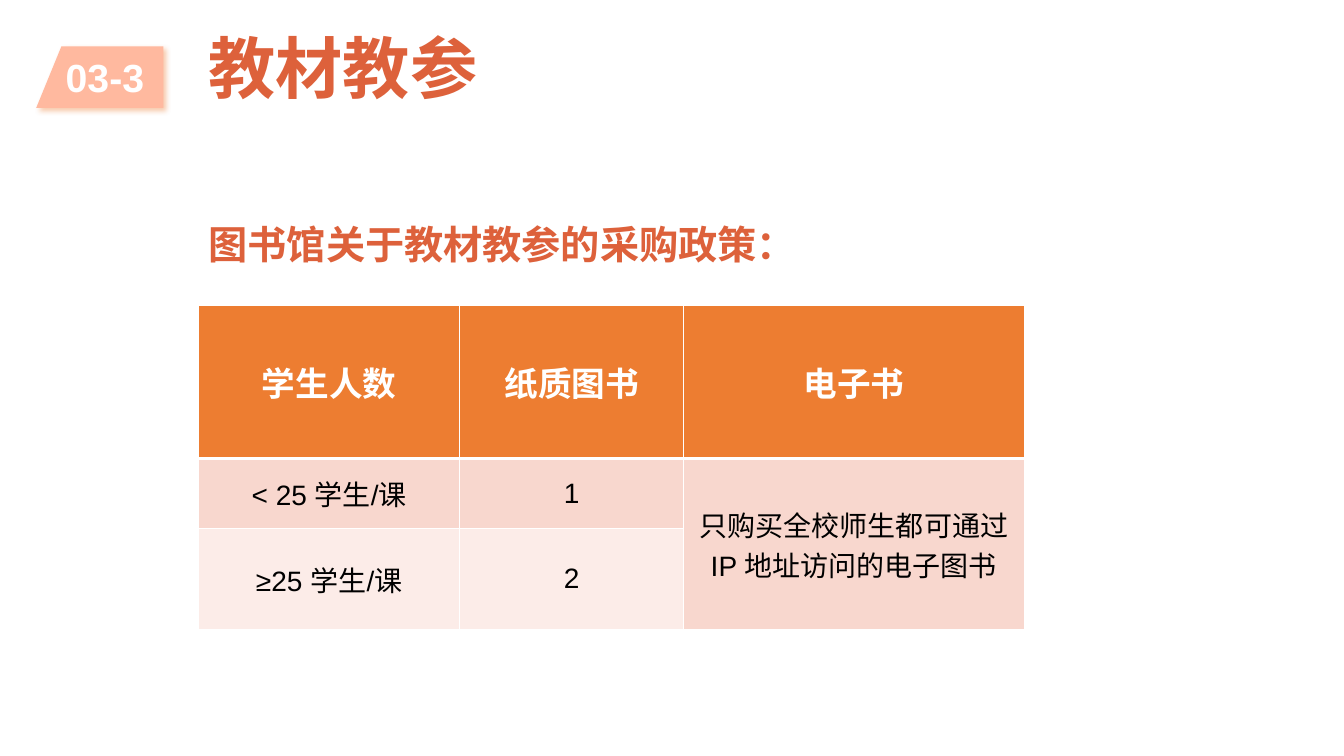
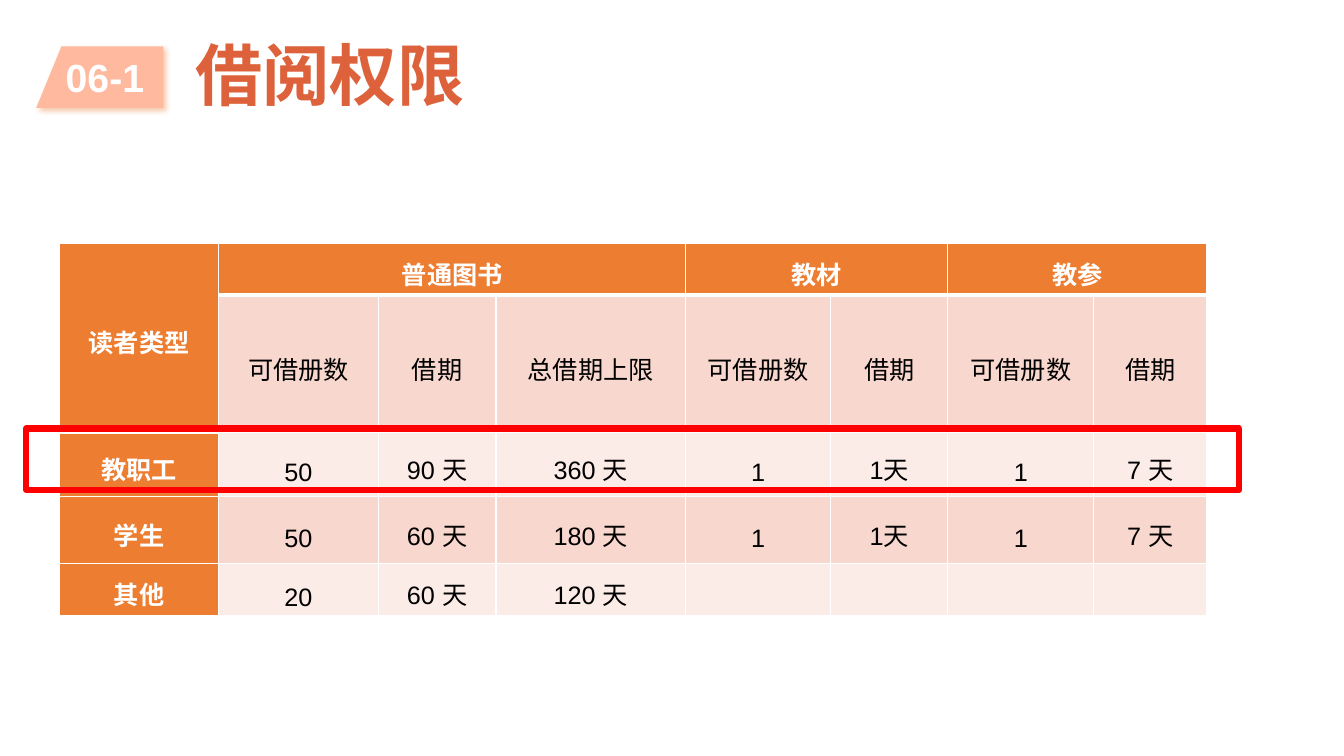
from pptx import Presentation
from pptx.dml.color import RGBColor
from pptx.enum.shapes import MSO_SHAPE as SHAPE
from pptx.enum.text import MSO_ANCHOR as ANCHOR, PP_ALIGN as ALIGN
from pptx.oxml import parse_xml
from pptx.oxml.ns import nsdecls, qn
from pptx.util import Inches, Pt

FONT = "Arial"
TITLE = "DD613B"
TAG = "FFB99F"
HEADER = "ED7D31"
BANDS = ("F8D7CE", "FCECE8")
WHITE = "FFFFFF"
BLACK = "000000"
RED = "FF0000"


def color(hex_code):
    return RGBColor.from_string(hex_code)


class Deck:
    def __init__(self):
        self.prs = Presentation()
        self.prs.slide_width, self.prs.slide_height = Inches(13.33), Inches(7.5)
        self.slide = None

    def new_slide(self):
        self.slide = self.prs.slides.add_slide(self.prs.slide_layouts[6])

    def set_text(self, frame, words, size, hex_code, bold=True, align=ALIGN.LEFT,
                 line_spacing=None, space_after=None):
        frame.text = words
        paragraph = frame.paragraphs[0]
        paragraph.alignment = align
        if line_spacing is not None:
            paragraph.line_spacing = line_spacing
        if space_after is not None:
            paragraph.space_after = space_after
        for run in paragraph.runs:
            run.font.name, run.font.size, run.font.bold = FONT, Pt(size), bold
            run.font.color.rgb = color(hex_code)

    def heading(self, words, box, size, anchor, line_spacing=None):
        frame = self.slide.shapes.add_textbox(*map(Inches, box)).text_frame
        frame.word_wrap = True
        frame.vertical_anchor = anchor
        self.set_text(frame, words, size, TITLE, line_spacing=line_spacing)

    def section_tag(self, number):
        """Slanted number tag in the top left corner, with a soft shadow."""
        left, top, right, bottom = map(Inches, (0.36, 0.46, 1.62, 1.07))
        outline = self.slide.shapes.build_freeform(Inches(0.61), top)
        outline.add_line_segments([(right, top), (right, bottom), (left, bottom)])
        tag = outline.convert_to_shape()
        tag.fill.solid()
        tag.fill.fore_color.rgb = color(TAG)
        tag.line.fill.background()
        tag.shadow.inherit = False
        tag._element.spPr.find(qn("a:effectLst")).append(parse_xml(
            f'<a:outerShdw {nsdecls("a")} blurRad="{Pt(4)}" dist="{Pt(3)}" '
            f'dir="{45 * 60000}" algn="tl" rotWithShape="0">'
            f'<a:srgbClr val="{HEADER}"><a:alpha val="40000"/></a:srgbClr>'
            '</a:outerShdw>'))
        frame = tag.text_frame
        frame.margin_left, frame.margin_right = Inches(0.2), Inches(0.1)
        frame.vertical_anchor = ANCHOR.MIDDLE
        self.set_text(frame, number, 28, WHITE, align=ALIGN.CENTER)

    def borders(self, cell, is_header):
        """White grid, with a heavier rule under the header row."""
        widths = {"L": 1, "R": 1, "T": 1, "B": 3} if is_header else {"L": 1, "R": 1, "B": 1}
        properties = cell._tc.get_or_add_tcPr()
        for side, width in widths.items():
            properties.append(parse_xml(
                f'<a:ln{side} {nsdecls("a")} w="{Pt(width)}"><a:solidFill>'
                f'<a:srgbClr val="{WHITE}"/></a:solidFill></a:ln{side}>'))

    def table(self, left, top, widths, heights, rows, merges, header_size, body_size,
              header_column=False, margins=None, line_spacing=None, space_after=None):
        grid = self.slide.shapes.add_table(
            len(heights), len(widths), Inches(left), Inches(top),
            Inches(sum(widths)), Inches(sum(heights))).table
        grid.horz_banding = False
        for column, width in zip(grid.columns, widths):
            column.width = Inches(width)
        for row, height in zip(grid.rows, heights):
            row.height = Inches(height)
        for r, row_words in enumerate(rows):
            for c, words in enumerate(row_words):
                cell = grid.cell(r, c)
                is_header = r == 0 or (header_column and c == 0)
                self.borders(cell, r == 0)
                cell.fill.solid()
                cell.fill.fore_color.rgb = color(HEADER if is_header else BANDS[(r - 1) % 2])
                cell.vertical_anchor = ANCHOR.MIDDLE
                if margins:
                    cell.margin_left = cell.margin_right = Inches(margins[0])
                    cell.margin_top = cell.margin_bottom = Inches(margins[1])
                if words:
                    self.set_text(cell.text_frame, words,
                                  header_size if is_header else body_size,
                                  WHITE if is_header else BLACK, is_header,
                                  ALIGN.CENTER, line_spacing, space_after)
        for first, last in merges:
            grid.cell(*first).merge(grid.cell(*last))

    def highlight(self, box):
        frame = self.slide.shapes.add_shape(SHAPE.RECTANGLE, *map(Inches, box))
        frame.shadow.inherit = False
        frame.fill.background()
        frame.line.color.rgb = color(RED)
        frame.line.width = Pt(4.5)


def textbook_slide(deck):
    deck.new_slide()
    deck.heading("教材教参", (1.97, 0.3, 8.45, 0.86), 48, ANCHOR.TOP, 0.9)
    deck.section_tag("03-3")
    deck.heading("图书馆关于教材教参的采购政策：", (1.97, 1.53, 5.95, 1.17), 28,
                 ANCHOR.BOTTOM, 1.2)
    # Purchasing policy
    deck.table(
        1.97, 3.03, (2.59, 2.22, 3.38), (1.52, 0.69, 1.01),
        [("学生人数", "纸质图书", "电子书"),
         ("< 25 学生/课", "1", "只购买全校师生都可通过 IP 地址访问的电子图书"),
         ("≥25 学生/课", "2", "")],
        [((1, 2), (2, 2))], header_size=24, body_size=20)


def loan_slide(deck):
    deck.new_slide()
    deck.heading("借阅权限", (1.84, 0.27, 8.08, 0.91), 48, ANCHOR.BOTTOM)
    # Loan limits by reader type
    quota, period = "可借册数", "借期"
    deck.table(
        0.59, 2.41, (1.58, 1.58, 1.17, 1.88, 1.44, 1.16, 1.45, 1.12),
        (0.52, 1.36, 0.64, 0.66, 0.52),
        [("读者类型", "普通图书", "", "", "教材", "", "教参", ""),
         ("", quota, period, "总借期上限", quota, period, quota, period),
         ("教职工", "50", "90 天", "360 天", "1", "1天", "1", "7 天"),
         ("学生", "50", "60 天", "180 天", "1", "1天", "1", "7 天"),
         ("其他", "20", "60 天", "120 天", "", "", "", "")],
        [((0, 0), (1, 0)), ((0, 1), (0, 3)), ((0, 4), (0, 5)), ((0, 6), (0, 7))],
        header_size=18, body_size=18, header_column=True, margins=(0.07, 0),
        line_spacing=Pt(32), space_after=Pt(8))
    deck.section_tag("06-1")
    # Frame around the staff row
    deck.highlight((0.26, 4.25, 12.03, 0.61))


def main():
    deck = Deck()
    textbook_slide(deck)
    loan_slide(deck)
    deck.prs.save("out.pptx")


if __name__ == "__main__":
    main()
